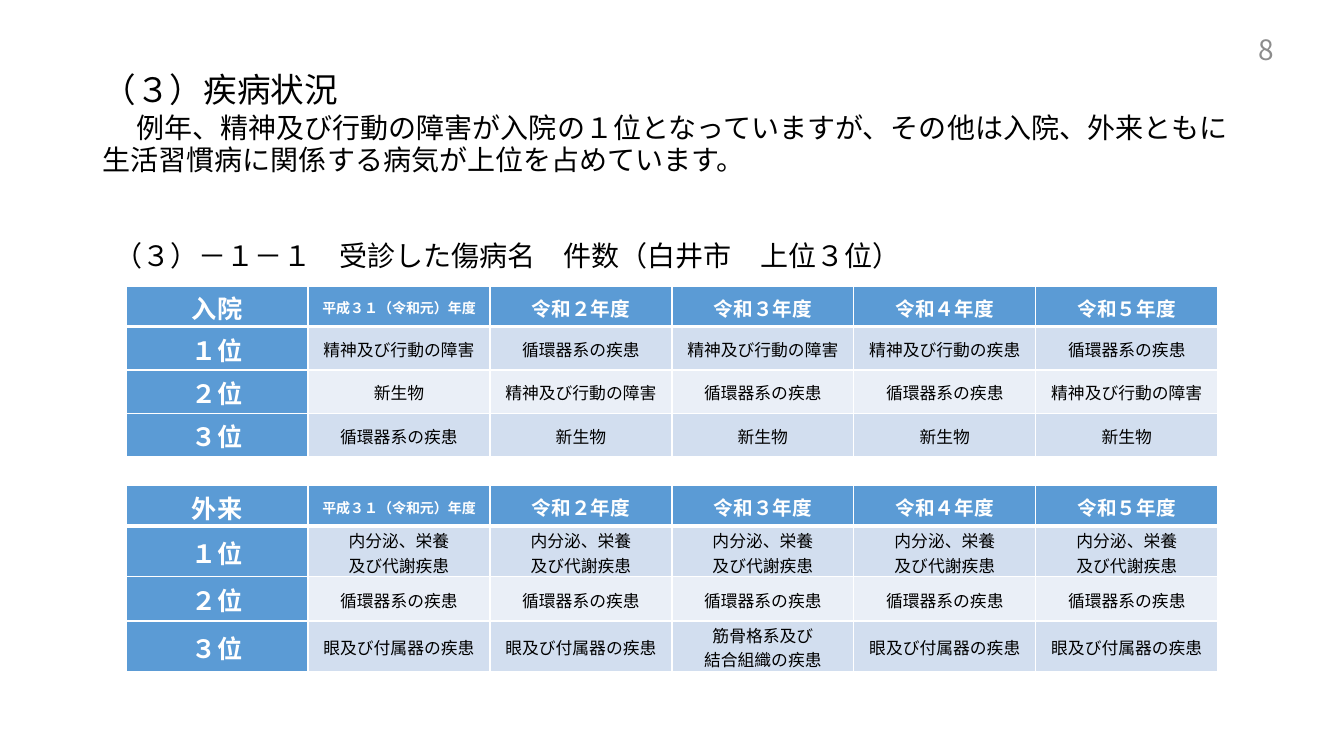
import pptx
import pptx.util
import pptx.dml.color
import pptx.enum.text
import pptx.oxml
import pptx.oxml.ns
from lxml import etree

Inches = pptx.util.Inches
Pt = pptx.util.Pt
RGBColor = pptx.dml.color.RGBColor
ALIGN = pptx.enum.text.PP_ALIGN
MIDDLE = pptx.enum.text.MSO_ANCHOR.MIDDLE
TOP = pptx.enum.text.MSO_ANCHOR.TOP
qn = pptx.oxml.ns.qn

BLACK = RGBColor(0x00, 0x00, 0x00)
WHITE = RGBColor(0xFF, 0xFF, 0xFF)
GRAY = RGBColor(0x8C, 0x8C, 0x8C)
BLUE = RGBColor(0x5B, 0x9B, 0xD5)
BAND_DARK = RGBColor(0xD2, 0xDE, 0xEF)
BAND_LIGHT = RGBColor(0xEA, 0xEF, 0xF7)
CJK = "Noto Sans CJK JP"


def add_run(p, text, size, color, bold=False, name=CJK):
    r = p.add_run()
    r.text = text
    fmt = {"size": Pt(size), "bold": bold, "name": name}
    for key, value in fmt.items():
        setattr(r.font, key, value)
    r.font.color.rgb = color
    ea = etree.SubElement(r.font._element, qn("a:ea"))
    ea.set("typeface", name)


def add_text(left, top, width, height, anchor):
    box = (Inches(v) for v in (left, top, width, height))
    tf = s.shapes.add_textbox(*box).text_frame
    tf.word_wrap = True
    tf.vertical_anchor = anchor
    return tf.paragraphs[0]


prs = pptx.Presentation()
prs.slide_width = Inches(13.33)
prs.slide_height = Inches(7.5)
s = prs.slides.add_slide(prs.slide_layouts[6])

p = add_text(0.92, 0.47, 11.5, 1.54, MIDDLE)
p.line_spacing = 0.9
add_run(p, "（３）疾病状況", 24, BLACK)
p.add_line_break()
add_run(p, "　", 24, BLACK)
add_run(p, "例年、精神及び行動の障害が入院の１位となっていますが、"
           "その他は入院、外来ともに生活習慣病に関係する病気が上位を占めています。", 20, BLACK)

p = add_text(9.73, 0.29, 3, 0.4, MIDDLE)
p.alignment = ALIGN.RIGHT
add_run(p, "8", 20, GRAY)

p = add_text(1.04, 2.32, 11.26, 0.44, TOP)
add_run(p, "（３）－１－１　受診した傷病名　件数（白井市　上位３位）", 20, BLACK, name="Arial")

YEARS = ["平成３１（令和元）年度", "令和２年度", "令和３年度", "令和４年度", "令和５年度"]
MENTAL = "精神及び行動の障害"
CIRCULATORY = "循環器系の疾患"
NEOPLASM = "新生物"
METABOLIC = "内分泌、栄養\n及び代謝疾患"
EYE = "眼及び付属器の疾患"
MUSCLE = "筋骨格系及び\n結合組織の疾患"

tables = [
    ("入院", 2.84, [0.4, 0.43, 0.43, 0.43], [
        [MENTAL, CIRCULATORY, MENTAL, "精神及び行動の疾患", CIRCULATORY],
        [NEOPLASM, MENTAL, CIRCULATORY, CIRCULATORY, MENTAL],
        [CIRCULATORY] + [NEOPLASM] * 4,
    ]),
    ("外来", 4.82, [0.4, 0.5, 0.44, 0.5], [
        [METABOLIC] * 5,
        [CIRCULATORY] * 5,
        [EYE, EYE, MUSCLE, EYE, EYE],
    ]),
]

for care, top, heights, ranks in tables:
    rows = [[care] + YEARS]
    rows += [[rank] + names for rank, names in zip(["１位", "２位", "３位"], ranks)]
    frame = s.shapes.add_table(4, 6, Inches(1.25), Inches(top), Inches(10.83), Inches(sum(heights)))
    table = frame.table
    for column in table.columns:
        column.width = Inches(10.83 / 6)
    for i, row in enumerate(rows):
        table.rows[i].height = Inches(heights[i])
        for j, text in enumerate(row):
            cell = table.cell(i, j)
            fmt = {"vertical_anchor": MIDDLE, "margin_top": Inches(0.02), "margin_bottom": 0}
            for key, value in fmt.items():
                setattr(cell, key, value)
            tcPr = cell._tc.get_or_add_tcPr()
            for side in "LRTB":
                thick = (i, side) in [(0, "B"), (1, "T")]
                ln = etree.SubElement(tcPr, qn("a:ln" + side), w=str(Pt(3 if thick else 1)))
                line_fill = etree.SubElement(ln, qn("a:solidFill"))
                etree.SubElement(line_fill, qn("a:srgbClr"), val=str(WHITE))
            heading = i == 0 or j == 0
            cell.fill.solid()
            cell.fill.fore_color.rgb = BLUE if heading else BAND_DARK if i % 2 else BAND_LIGHT
            if j == 0:
                size = 18
            elif i == 0:
                size = 10 if j == 1 else 14
            else:
                size = 12
            tf = cell.text_frame
            for k, line in enumerate(text.split("\n")):
                p = tf.add_paragraph() if k else tf.paragraphs[0]
                p.alignment = ALIGN.CENTER
                add_run(p, line, size, WHITE if heading else BLACK, heading)

prs.save("out.pptx")
